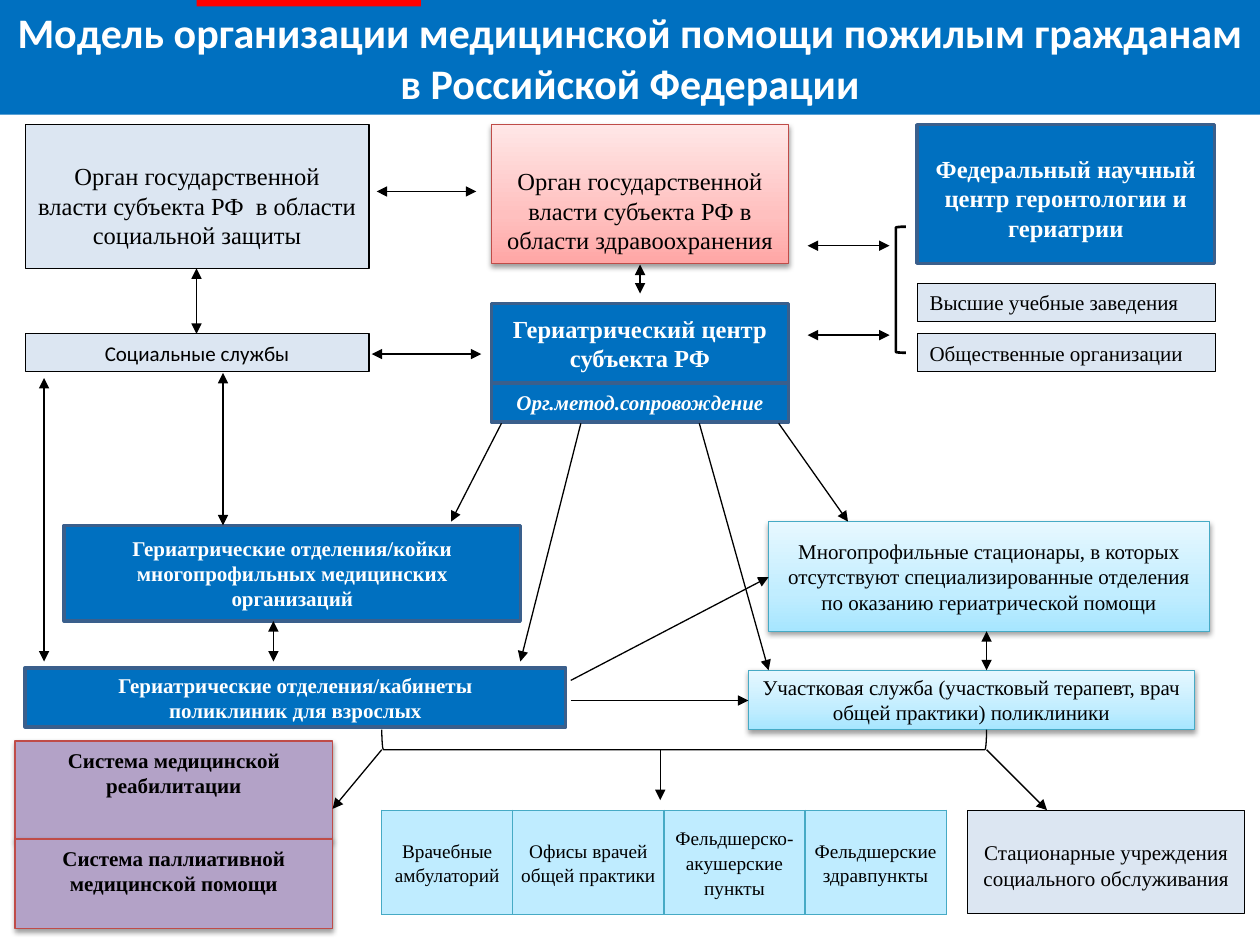
"""Build the slide on the model of medical care for elderly citizens."""
from copy import deepcopy

from pptx import Presentation
from pptx.dml.color import RGBColor
from pptx.enum.shapes import MSO_CONNECTOR as CONN, MSO_SHAPE as SHAPE
from pptx.enum.text import MSO_ANCHOR as ANCHOR, MSO_AUTO_SIZE as AUTO, PP_ALIGN as ALIGN
from pptx.oxml import parse_xml
from pptx.oxml.ns import nsdecls, qn
from pptx.util import Inches, Pt

C = {"blue": "0070C0", "navy": "3A5F8C", "pale": "DCE6F2", "black": "000000",
     "white": "FFFFFF", "red": "FF0000", "brick": "BF4C48", "violet": "B3A2C7",
     "teal": "46AAC5", "sky": "BFECFF"}
GRADIENTS = {"pink": ("FFA6A5", "FFC0BF", "FFE7E7"), "aqua": ("A7E6FF", "C1EDFF", "E7F8FF")}
SERIF = "Times New Roman"
SHADOW = (f'<a:outerShdw {nsdecls("a")} blurRad="{Pt(3.1)}" dist="{Pt(1.6)}" dir="5400000" '
          'rotWithShape="0"><a:srgbClr val="000000"><a:alpha val="38000"/></a:srgbClr></a:outerShdw>')


def rgb(name):
    return RGBColor.from_string(C[name])


def write(tf, lines, size, color="black", bold=False, align=ALIGN.CENTER, font=SERIF):
    tf.word_wrap = True
    for i, line in enumerate(lines.split("\n")):
        p = tf.add_paragraph() if i else tf.paragraphs[0]
        p.text = line
        p.alignment = align
        p.font.name, p.font.size, p.font.bold = font, Pt(size), bold
        p.font.color.rgb = rgb(color)


prs = Presentation()
prs.slide_width, prs.slide_height = Inches(10), Inches(7.5)
slide = prs.slides.add_slide(prs.slide_layouts[5])
shapes = slide.shapes

title = shapes.title
title.left, title.top, title.width, title.height = 0, 0, Inches(10), Inches(0.91)
title.fill.solid()
title.fill.fore_color.rgb = rgb("blue")
title.text_frame.auto_size = AUTO.NONE
write(title.text_frame, "Модель организации медицинской помощи пожилым гражданам\n"
      "в Российской Федерации", 24, "white", True, font="Calibri")

accent = shapes.add_shape(SHAPE.RECTANGLE, Inches(1.56), 0, Inches(1.78), Inches(0.05))
accent.shadow.inherit = False
accent.fill.solid()
accent.fill.fore_color.rgb = rgb("red")
accent.line.fill.background()

styles = {
    "pale": ("black", 0.75, "black", False),
    "blue": ("navy", 2, "white", True),
    "pink": ("brick", 0.75, "black", False),
    "aqua": ("teal", 0.75, "black", False),
    "violet": ("brick", 0.75, "black", True),
}
MID, TOP = ANCHOR.MIDDLE, ANCHOR.TOP
boxes = [
    ("pale", 0.2, 0.99, 2.73, 1.14, 14, TOP, 0.29,
     "Орган государственной власти субъекта РФ  в области социальной защиты"),
    ("pale", 0.2, 2.65, 2.73, 0.3, 12, MID, 0.05, "Социальные службы"),
    ("pale", 7.28, 2.25, 2.37, 0.3, 12, MID, 0.05, "Высшие учебные заведения"),
    ("pale", 7.28, 2.65, 2.37, 0.3, 12, MID, 0.05, "Общественные организации"),
    ("pink", 3.9, 0.99, 2.36, 1.1, 14, TOP, 0.33,
     "Орган государственной власти субъекта РФ в области здравоохранения"),
    ("blue", 3.9, 2.41, 2.36, 0.63, 14, MID, 0.05, "Гериатрический центр субъекта РФ"),
    ("blue", 3.9, 3.04, 2.36, 0.31, 12, MID, 0.05, "Орг.метод.сопровождение"),
    ("blue", 7.28, 0.99, 2.36, 1.1, 14, MID, 0.11,
     "Федеральный научный центр геронтологии и гериатрии"),
    ("blue", 0.51, 4.17, 3.62, 0.76, 12, MID, 0.05,
     "Гериатрические отделения/койки многопрофильных медицинских организаций"),
    ("blue", 0.2, 5.3, 4.29, 0.47, 12, MID, 0.05,
     "Гериатрические отделения/кабинеты\nполиклиник для взрослых"),
    ("aqua", 6.1, 4.14, 3.5, 0.87, 12, MID, 0.05,
     "Многопрофильные стационары, в которых отсутствуют специализированные "
     "отделения по оказанию гериатрической помощи"),
    ("aqua", 5.94, 5.32, 3.54, 0.47, 12, MID, 0.05,
     "Участковая служба (участковый терапевт, врач общей практики) поликлиники"),
    ("violet", 0.12, 5.88, 2.52, 0.79, 12, TOP, 0.05, "Система медицинской реабилитации"),
    ("violet", 0.12, 6.66, 2.52, 0.71, 12, TOP, 0.05, "Система паллиативной медицинской помощи"),
    ("pale", 7.68, 6.43, 2.2, 0.82, 12, MID, 0.1,
     "Стационарные учреждения социального обслуживания"),
]
for style, x, y, w, h, size, anchor, inset, text in boxes:
    line, weight, color, bold = styles[style]
    s = shapes.add_shape(SHAPE.RECTANGLE, Inches(x), Inches(y), Inches(w), Inches(h))
    s.shadow.inherit = False
    if style in GRADIENTS:
        s.fill.gradient()
        s.fill.gradient_angle = 90
        stops = s._element.spPr.find(".//" + qn("a:gsLst"))
        stops.append(deepcopy(stops[-1]))
        for stop, at, value in zip(s.fill.gradient_stops, (0, 0.35, 1), GRADIENTS[style]):
            stop.position = at
            stop.color.rgb = RGBColor.from_string(value)
    else:
        s.fill.solid()
        s.fill.fore_color.rgb = rgb(style)
    s.line.color.rgb = rgb(line)
    s.line.width = Pt(weight)
    if style in ("pink", "aqua", "violet"):
        s._element.spPr.find(qn("a:effectLst")).append(parse_xml(SHADOW))
    tf = s.text_frame
    tf.vertical_anchor = anchor
    tf.margin_top = Inches(inset)
    listed = text in ("Высшие учебные заведения", "Общественные организации")
    write(tf, text, size, color, bold, ALIGN.LEFT if listed else ALIGN.CENTER,
          "Calibri" if text == "Социальные службы" else SERIF)
    tf.paragraphs[0].font.italic = text == "Орг.метод.сопровождение"

for kind, x, y, w, h, turn, weight in [
    (SHAPE.RIGHT_BRACKET, 5.35, 3.47, 0.16, 4.8, 90, 0.75),
    (SHAPE.LEFT_BRACKET, 7.11, 1.8, 0.08, 1, 0, 1.5),
]:
    s = shapes.add_shape(kind, Inches(x), Inches(y), Inches(w), Inches(h))
    s.shadow.inherit = False
    s.rotation = turn
    s.fill.background()
    s.line.color.rgb = rgb("black")
    s.line.width = Pt(weight)

two_way = [
    (5.08, 2.1, 5.08, 2.33), (6.41, 2.66, 7.06, 2.66), (6.41, 1.95, 7.06, 1.95),
    (2.95, 2.81, 3.82, 2.81), (2.99, 1.52, 3.78, 1.52), (1.56, 2.13, 1.56, 2.65),
    (1.77, 2.96, 1.77, 4.17), (7.83, 5.01, 7.83, 5.32), (0.35, 3, 0.35, 5.25),
    (2.17, 4.93, 2.17, 5.25),
]
one_way = [
    (3.98, 3.36, 3.58, 4.14), (6.18, 3.36, 6.73, 4.14), (4.61, 3.36, 4.13, 5.25),
    (5.24, 5.95, 5.24, 6.35), (5.55, 3.36, 6.1, 5.32), (4.53, 5.56, 5.94, 5.56),
    (4.53, 5.4, 6.1, 4.58), (7.83, 5.95, 8.31, 6.43), (3.03, 5.95, 2.64, 6.42),
]
for ends, arrows in ((("headEnd", "tailEnd"), two_way), (("tailEnd",), one_way)):
    for arrow in arrows:
        s = shapes.add_connector(CONN.STRAIGHT, *map(Inches, arrow))
        s.line.color.rgb = rgb("black")
        s.line.width = Pt(0.75)
        for end in ends:
            s.line._get_or_add_ln().append(parse_xml(f'<a:{end} {nsdecls("a")} type="triangle"/>'))
        s._element.spPr.append(parse_xml(f'<a:effectLst {nsdecls("a")}/>'))

units = ["Врачебные амбулаторий", "Офисы врачей общей практики",
         "Фельдшерско-акушерские пункты", "Фельдшерские здравпункты"]
table = shapes.add_table(1, 4, Inches(3.03), Inches(6.43), Inches(4.48), Inches(0.83)).table
table.first_row = table.horz_banding = False
for column, cell, width, text in zip(table.columns, table.rows[0].cells, (1.04, 1.2, 1.12, 1.12), units):
    column.width = Inches(width)
    cell.margin_left = cell.margin_right = Inches(0.06)
    cell.margin_top = cell.margin_bottom = 0
    cell.vertical_anchor = MID
    write(cell.text_frame, text, 11)
    cell.text_frame.paragraphs[0].line_spacing = 1.15
    tc_pr = cell._tc.get_or_add_tcPr()
    for side in ("lnL", "lnR", "lnT", "lnB"):
        tc_pr.append(parse_xml(f'<a:{side} {nsdecls("a")} w="{Pt(0.75)}"><a:solidFill>'
                               f'<a:srgbClr val="{C["teal"]}"/></a:solidFill></a:{side}>'))
    cell.fill.solid()
    cell.fill.fore_color.rgb = rgb("sky")

prs.save("out.pptx")
